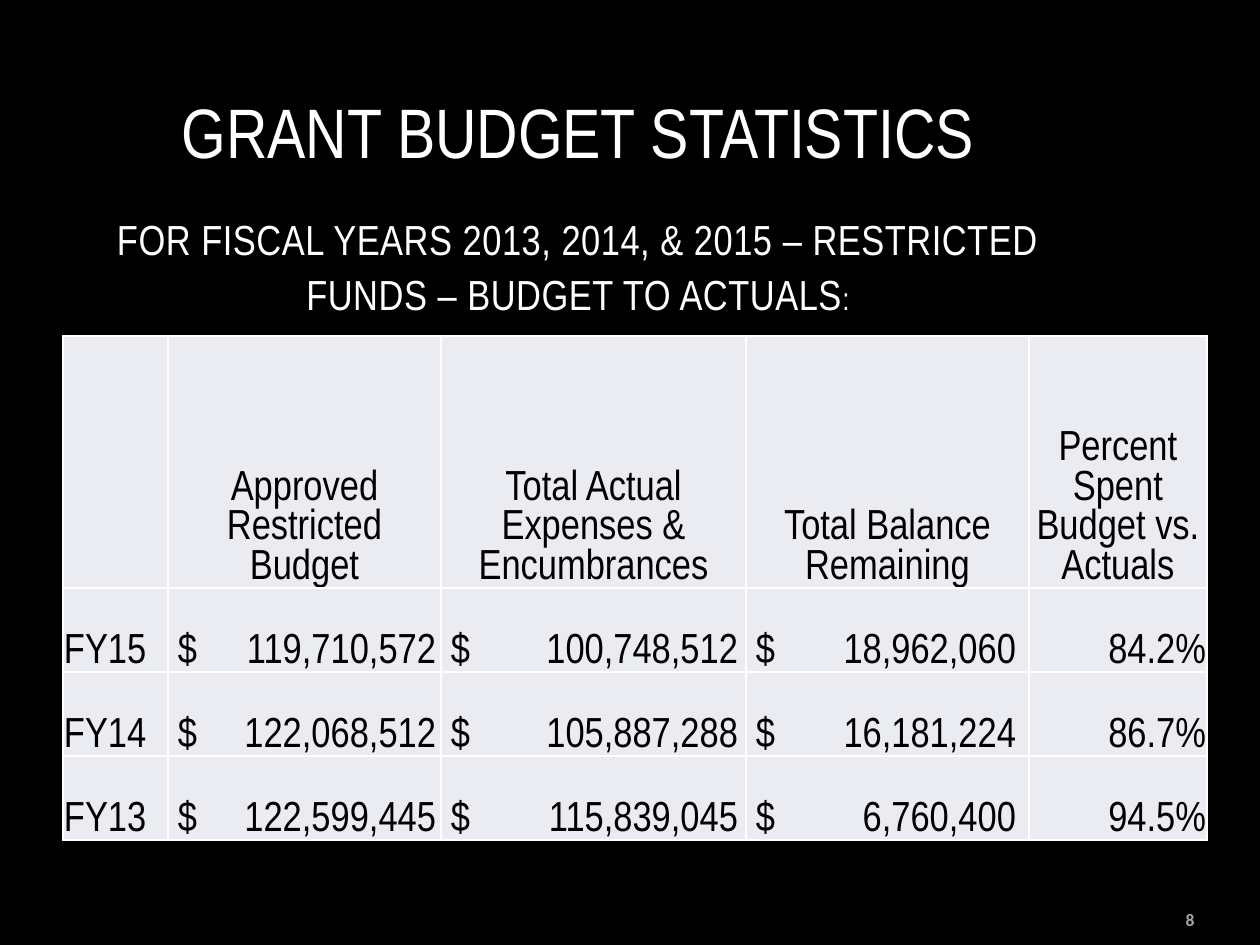
from lxml import etree
from pptx import Presentation
from pptx import util as u
from pptx.dml.color import RGBColor
from pptx.enum import text
from pptx.oxml import ns

BLACK = RGBColor(0, 0, 0)
WHITE = RGBColor(255, 255, 255)
GRAY = RGBColor(0xA6, 0xA6, 0xA6)
PALE = RGBColor(0xEA, 0xEC, 0xF2)
SCALE = 914400 // 126
LEFT, CENTER, RIGHT = text.PP_ALIGN.LEFT, text.PP_ALIGN.CENTER, text.PP_ALIGN.RIGHT
TOP, MIDDLE, BOTTOM = text.MSO_ANCHOR.TOP, text.MSO_ANCHOR.MIDDLE, text.MSO_ANCHOR.BOTTOM

COLS = [105, 273, 305, 283, 178]
ROWS = [252, 84, 84, 84]
TABS = [0, 258, 287, 260, 0]
HEADS = ["", "Approved Restricted Budget", "Total Actual Expenses & Encumbrances",
         "Total Balance Remaining", "Percent Spent Budget vs. Actuals"]
YEARS = [
    ["FY15", "$\t119,710,572", "$\t100,748,512", "$\t18,962,060", "84.2%"],
    ["FY14", "$\t122,068,512", "$\t105,887,288", "$\t16,181,224", "86.7%"],
    ["FY13", "$\t122,599,445", "$\t115,839,045", "$\t6,760,400", "94.5%"],
]


def px(n):
    return u.Emu(n * SCALE)


def sub(node, tag, **attrs):
    return etree.SubElement(node, ns.qn(tag), attrs)


class Deck:
    face = "Arial Narrow"

    def __init__(self):
        self.prs = Presentation()
        self.prs.slide_width, self.prs.slide_height = u.Inches(10), u.Inches(7.5)
        self.slide = self.prs.slides.add_slide(self.prs.slide_layouts[5])
        fill = self.slide.background.fill
        fill.solid()
        fill.fore_color.rgb = BLACK

    def style(self, para, size, color, align, face=None, bold=False):
        para.alignment = align
        for run in para.runs:
            font = run.font
            font.name, font.size, font.bold = face or self.face, u.Pt(size), bold
            font.color.rgb = color

    def place(self, shape, box, anchor):
        shape.left, shape.top, shape.width, shape.height = map(px, box)
        frame = shape.text_frame
        frame.word_wrap = True
        frame.auto_size = text.MSO_AUTO_SIZE.NONE
        frame.vertical_anchor = anchor
        return frame.paragraphs[0]

    def title(self, words, box):
        shape = self.slide.shapes.title
        shape.text_frame.text = words
        para = self.place(shape, box, BOTTOM)
        self.style(para, 40, WHITE, CENTER)

    def label(self, words, box, size, color, align, anchor=TOP, **look):
        shape = self.slide.shapes.add_textbox(0, 0, 0, 0)
        shape.text_frame.text = words
        para = self.place(shape, box, anchor)
        self.style(para, size, color, align, **look)
        return para

    def cell(self, cell, words, align, tab=0):
        cell.fill.solid()
        cell.fill.fore_color.rgb = PALE
        cell.vertical_anchor = BOTTOM
        cell.margin_left = px(10 if tab else 1)
        cell.margin_right = cell.margin_top = px(1)
        cell.margin_bottom = 0
        cell.text_frame.text = words
        para = cell.text_frame.paragraphs[0]
        self.style(para, 24, BLACK, align)
        if tab:
            tabs = sub(para._p.get_or_add_pPr(), "a:tabLst")
            sub(tabs, "a:tab", pos=str(px(tab)), algn="r")
        props = cell._tc.get_or_add_tcPr()
        for spot, side in enumerate(("a:lnL", "a:lnR", "a:lnT", "a:lnB")):
            line = sub(props, side, w=str(u.Pt(1)))
            sub(sub(line, "a:solidFill"), "a:srgbClr", val=str(WHITE))
            props.insert(spot, line)

    def table(self, left, top):
        size = map(px, (left, top, sum(COLS), sum(ROWS)))
        grid = self.slide.shapes.add_table(len(ROWS), len(COLS), *size).table
        for col, wide in zip(grid.columns, COLS):
            col.width = px(wide)
        for row, high in zip(grid.rows, ROWS):
            row.height = px(high)
        for c, head in enumerate(HEADS):
            self.cell(grid.cell(0, c), head, CENTER)
        for r, year in enumerate(YEARS, 1):
            for c, words in enumerate(year):
                align = RIGHT if c == len(COLS) - 1 else LEFT
                self.cell(grid.cell(r, c), words, align, TABS[c])


def main():
    deck = Deck()
    deck.title("GRANT BUDGET STATISTICS", (49, 32, 1058, 147))
    para = deck.label("FOR FISCAL YEARS 2013, 2014, & 2015 – RESTRICTED FUNDS – BUDGET TO ACTUALS",
                      (49, 202, 1058, 120), 24, WHITE, CENTER)
    colon = para.add_run()
    colon.text = ":"
    deck.style(para, 24, WHITE, CENTER)
    colon.font.size = u.Pt(18)
    para.line_spacing = 1.1
    for run in para.runs:
        run.font._element.set("spc", "30")
    deck.table(63, 336)
    deck.label("8", (1086, 902, 121, 34), 10, GRAY, RIGHT, MIDDLE, face="Calibri", bold=True)
    deck.prs.save("out.pptx")


if __name__ == "__main__":
    main()
